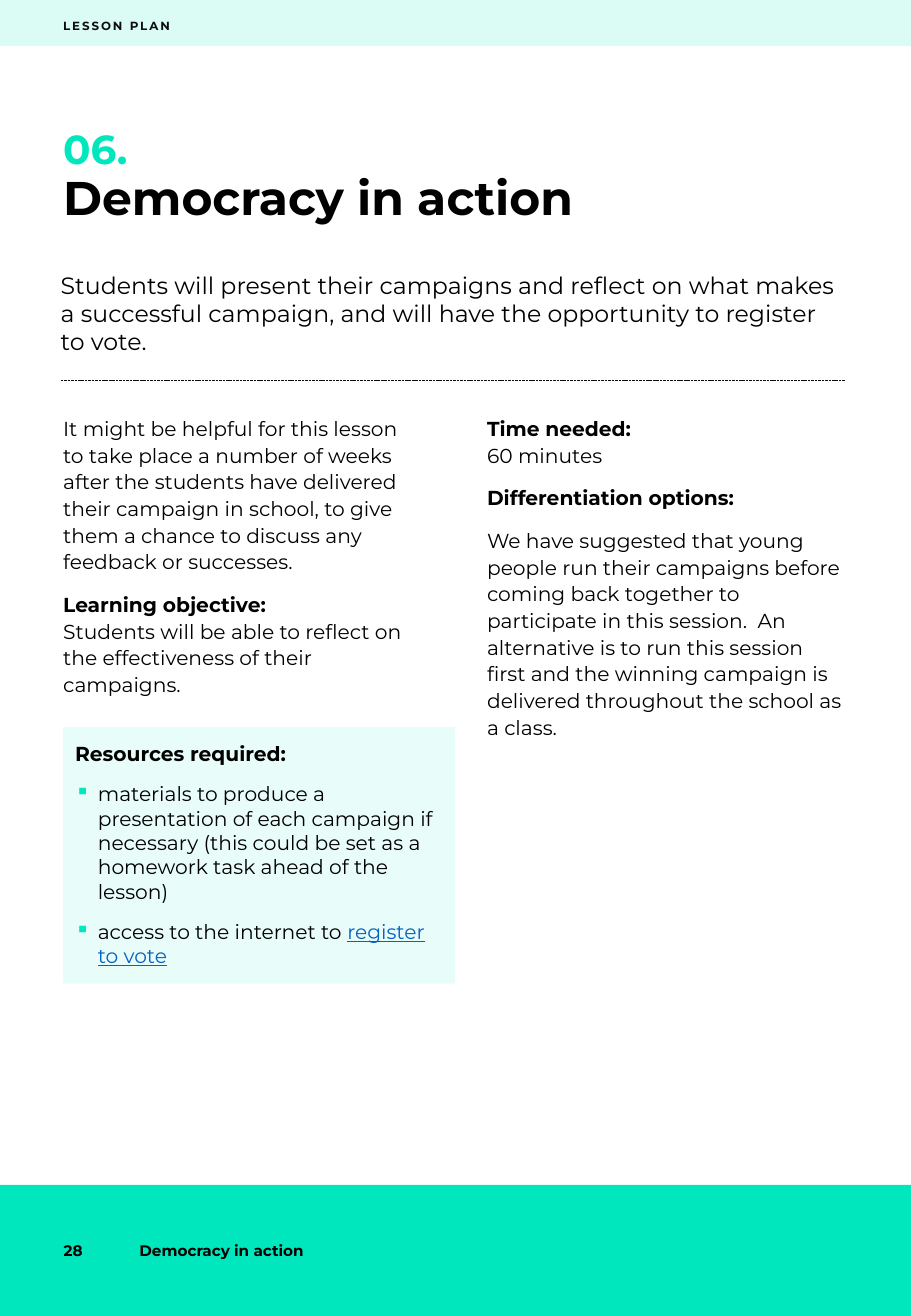
import pptx
import pptx.dml.color
import pptx.enum.dml
import pptx.enum.shapes
import pptx.enum.text
import pptx.oxml.ns
import pptx.util
from lxml import etree

Pt = pptx.util.Pt
qn = pptx.oxml.ns.qn
ANCHOR = pptx.enum.text.MSO_ANCHOR

COLORS = {"green": "00E7BD", "black": "000000", "ink": "0D0D0D", "link": "0563C1"}
WIDTH, HEIGHT = 540, 780.48
LEFT, RIGHT = 37.44, 501.12
COLUMN = 212.4
FOOTER_TOP, FOOTER_HEIGHT = 702.72, 77.76


def rgb(name):
    return pptx.dml.color.RGBColor.from_string(COLORS[name])


class LessonPage:
    def __init__(self, slide, font="Montserrat"):
        self.slide = slide
        self.font = font

    def band(self, x, y, w, h, color, opacity=100):
        sp = self.slide.shapes.add_shape(
            pptx.enum.shapes.MSO_SHAPE.RECTANGLE, Pt(x), Pt(y), Pt(w), Pt(h))
        sp.shadow.inherit = False
        sp.line.fill.background()
        sp.fill.solid()
        sp.fill.fore_color.rgb = rgb(color)
        if opacity < 100:
            clr = sp.fill._xPr.find(".//" + qn("a:srgbClr"))
            etree.SubElement(clr, qn("a:alpha"), val=str(opacity * 1000))
        return sp

    def rule(self, x1, x2, y):
        line = self.slide.shapes.add_connector(
            pptx.enum.shapes.MSO_CONNECTOR.STRAIGHT, Pt(x1), Pt(y), Pt(x2), Pt(y))
        line.line.color.rgb = rgb("ink")
        line.line.width = Pt(0.5)
        line.line.dash_style = pptx.enum.dml.MSO_LINE.SQUARE_DOT
        etree.SubElement(line._element.spPr, qn("a:effectLst"))

    def frame(self, sp, inset=0, anchor=ANCHOR.TOP):
        tf = sp.text_frame
        tf.word_wrap = True
        tf.auto_size = pptx.enum.text.MSO_AUTO_SIZE.NONE
        tf.vertical_anchor = anchor
        tf.margin_left = tf.margin_right = tf.margin_top = tf.margin_bottom = Pt(inset)
        return tf

    def style(self, r, size, color="black", bold=False):
        r.font.name = self.font
        r.font.size = Pt(size)
        r.font.bold = bold
        r.font.color.rgb = rgb(color)

    def title(self, text, x, y, w, h):
        sp = self.slide.shapes.title
        sp.left, sp.top, sp.width, sp.height = Pt(x), Pt(y), Pt(w), Pt(h)
        tf = self.frame(sp)
        tf.text = text
        p = tf.paragraphs[0]
        p.alignment = pptx.enum.text.PP_ALIGN.LEFT
        p.line_spacing = 0.9
        self.style(p.runs[0], 28, bold=True)

    def box(self, x, y, w, h):
        return self.slide.shapes.add_textbox(Pt(x), Pt(y), Pt(w), Pt(h))

    def label(self, text, x, y, w, h, size, color="black", bold=True,
              inset=0, anchor=ANCHOR.TOP):
        tf = self.frame(self.box(x, y, w, h), inset, anchor)
        tf.text = text
        r = tf.paragraphs[0].runs[0]
        self.style(r, size, color, bold)
        return r

    def paragraph(self, tf, text, line_spacing=1.1):
        """Start a paragraph, reusing the empty first one of the frame."""
        p = tf.paragraphs[0]
        if p.runs:
            p = tf.add_paragraph()
            p.space_before = Pt(7.5)
        p.space_after = Pt(2)
        p.line_spacing = line_spacing
        p.alignment = pptx.enum.text.PP_ALIGN.LEFT
        p.text = text
        for r in p.runs:
            self.style(r, 12)
        for br in p._p.findall(qn("a:br")):
            etree.SubElement(br, qn("a:rPr"), sz="1200")
        return p

    def section(self, tf, heading, text=""):
        """Add a bold heading, with its text on the next line if given."""
        p = self.paragraph(tf, f"{heading}\v{text}" if text else heading)
        p.runs[0].font.bold = True

    def bullet(self, tf, text, link=""):
        p = self.paragraph(tf, text, 1.0)
        pPr = p._p.get_or_add_pPr()
        pPr.set("marL", str(Pt(13.5)))
        pPr.set("indent", str(-Pt(13.5)))
        clr = etree.SubElement(pPr, qn("a:buClr"))
        etree.SubElement(clr, qn("a:srgbClr"), val=COLORS["green"])
        etree.SubElement(pPr, qn("a:buChar"), char="▪")
        if link:
            r = p.add_run()
            r.text = link
            self.style(r, 12, "link")
            r.font.underline = True


def main():
    prs = pptx.Presentation()
    prs.slide_width, prs.slide_height = Pt(WIDTH), Pt(HEIGHT)
    page = LessonPage(prs.slides.add_slide(prs.slide_layouts[5]))
    full = RIGHT - LEFT

    page.band(0, 0, WIDTH, 27.36, "green", 14)
    page.band(0, FOOTER_TOP, WIDTH, FOOTER_HEIGHT, "green")
    tag = page.label("LESSON PLAN", LEFT, 5.04, 194.4, 20.16, 7, "ink",
                     anchor=ANCHOR.MIDDLE)
    tag.font._element.set("spc", "120")

    page.label("06.", LEFT, 73.44, full, 26.64, 24, "green")
    page.title("Democracy in action", LEFT, 103.68, full, 63.36)
    page.label("Students will present their campaigns and reflect on what makes "
               "a successful campaign, and will have the opportunity to register "
               "to vote.", 36, 160.56, full + 1.44, 50.4, 14, bold=False)
    page.rule(36, RIGHT, 225.36)

    tf = page.frame(page.box(LEFT, 245.52, COLUMN, 177.12))
    page.paragraph(tf, "It might be helpful for this lesson to take place a number "
                       "of weeks after the students have delivered their campaign "
                       "in school, to give them a chance to discuss any feedback "
                       "or successes.")
    page.section(tf, "Learning objective:",
                 "Students will be able to reflect on the effectiveness of their "
                 "campaigns.")

    tf = page.frame(page.box(RIGHT - COLUMN, 245.52, COLUMN, 442.08))
    page.section(tf, "Time needed:", "60 minutes")
    page.section(tf, "Differentiation options:")
    page.paragraph(tf, "We have suggested that young people run their campaigns "
                       "before coming back together to participate in this "
                       "session.  An alternative is to run this session first and "
                       "the winning campaign is delivered throughout the school as "
                       "a class.")

    tf = page.frame(page.band(LEFT, 431.1, 232.56, 152.4, "green", 9), 7.2)
    page.section(tf, "Resources required:")
    page.bullet(tf, "materials to produce a presentation of each campaign if "
                    "necessary (this could be set as a homework task ahead of the "
                    "lesson)")
    page.bullet(tf, "access to the internet to ", "register to vote")

    for text, x, w in (("28", 30.6, 44.64), ("Democracy in action", 75.6, 199.44)):
        page.label(text, x, FOOTER_TOP, w, FOOTER_HEIGHT, 9, inset=7.2,
                   anchor=ANCHOR.MIDDLE)

    prs.save("out.pptx")


if __name__ == "__main__":
    main()
